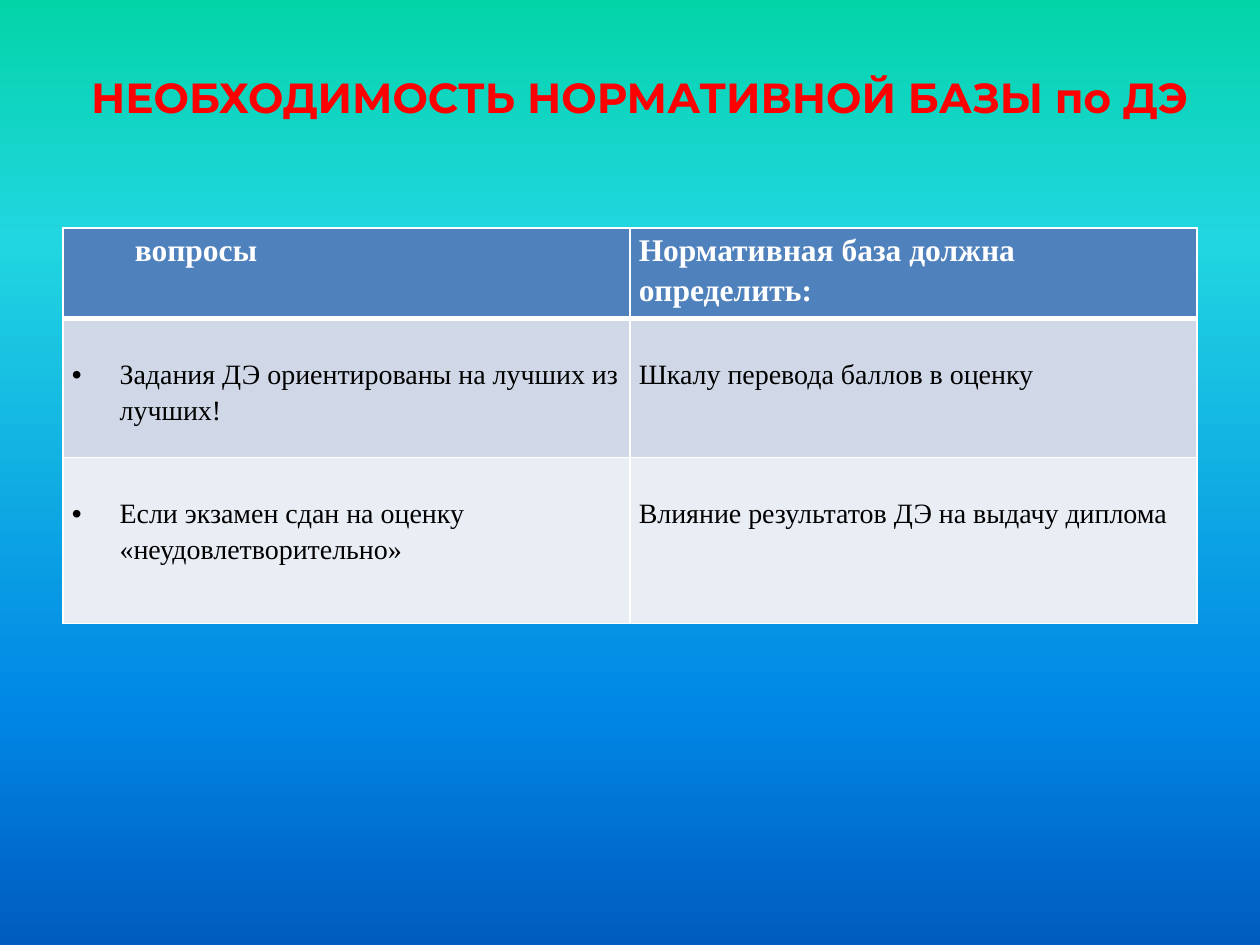
from copy import deepcopy

from lxml.etree import SubElement
from pptx import Presentation
from pptx.dml.color import RGBColor
from pptx.enum.text import MSO_ANCHOR, PP_ALIGN
from pptx.oxml.ns import qn
from pptx.util import Inches, Pt


def rgb(hex_code):
    return RGBColor.from_string(hex_code)


def style_font(font, formats):
    """Apply font settings; the colour goes under the key 'color'."""
    for key, value in formats.items():
        if key == "color":
            font.color.rgb = rgb(value)
        else:
            setattr(font, key, value)


prs = Presentation()
prs.slide_width, prs.slide_height = Inches(10), Inches(7.5)
W, H = prs.slide_width, prs.slide_height
slide = prs.slides.add_slide(prs.slide_layouts[6])

# Background: four-stop gradient from top to bottom
sky = [(0, "03D4A8"), (0.25, "21D6E0"), (0.75, "0087E6"), (1, "005CBF")]
background = slide.background.fill
background.gradient()
background.gradient_angle = 270
stop_list = next(slide.element.iter(qn("a:gsLst")))
while len(stop_list) < len(sky):
    stop_list.append(deepcopy(stop_list[0]))
for stop, (position, color) in zip(background.gradient_stops, sky):
    stop.position = position
    stop.color.rgb = rgb(color)

# Heading
heading = slide.shapes.add_textbox(
    int(W * 0.035), int(H * 0.04), int(W * 0.945), int(H * 0.124)).text_frame
heading.word_wrap = True
heading.vertical_anchor = MSO_ANCHOR.MIDDLE
heading_line = heading.paragraphs[0]
heading_line.alignment = PP_ALIGN.CENTER
heading_run = heading_line.add_run()
heading_run.text = "НЕОБХОДИМОСТЬ НОРМАТИВНОЙ БАЗЫ по ДЭ"
style_font(heading_run.font, {
    "name": "Montserrat", "size": Pt(24), "bold": True, "color": "FF0000"})

# Questions and what the regulations must settle
rows = [
    ("вопросы", "Нормативная база должна определить:"),
    ("Задания ДЭ ориентированы на лучших из лучших!",
     "Шкалу перевода баллов в оценку"),
    ("Если экзамен сдан на оценку «неудовлетворительно»",
     "Влияние результатов ДЭ на выдачу диплома"),
]
row_fills = ["4F81BD", "D0D8E8", "E9EDF4"]
row_heights = [Inches(0.72), Inches(1.1), Inches(1.32)]
header_font = {"name": "Times New Roman", "size": Pt(18), "bold": True,
               "color": "FFFFFF"}
body_font = {"name": "Times New Roman", "size": Pt(16), "bold": False,
             "color": "000000"}

table = slide.shapes.add_table(
    len(rows), 2, int(W * 0.05), Inches(1.81), int(W * 0.9),
    sum(row_heights)).table
for row, height in zip(table.rows, row_heights):
    row.height = height

for r, texts in enumerate(rows):
    is_header = r == 0
    for c, text in enumerate(texts):
        cell = table.cell(r, c)
        cell.margin_left = cell.margin_right = Inches(0.07)
        cell.margin_top = 0 if is_header else Inches(0.29)
        cell.margin_bottom = 0

        # A thick rule separates the header from the body
        borders = {"lnL": 1, "lnR": 1, "lnT": 3 if r == 1 else 1,
                   "lnB": 3 if is_header else 1}
        properties = cell._tc.get_or_add_tcPr()
        for side, width in borders.items():
            line = SubElement(properties, qn(f"a:{side}"), w=str(Pt(width)))
            SubElement(SubElement(line, qn("a:solidFill")),
                       qn("a:srgbClr"), val="FFFFFF")
        cell.fill.solid()
        cell.fill.fore_color.rgb = rgb(row_fills[r])

        paragraph = cell.text_frame.paragraphs[0]
        paragraph.line_spacing = 1.15
        run = paragraph.add_run()
        run.text = text
        style_font(run.font, header_font if is_header else body_font)
        if c == 0:
            layout = paragraph._p.get_or_add_pPr()
            layout.set("marL", str(Inches(0.5 if is_header else 0.38)))
            layout.set("indent", str(0 if is_header else -Inches(0.38)))
            if not is_header:
                SubElement(layout, qn("a:buFont"), typeface="Arial")
                SubElement(layout, qn("a:buChar"), char="•")

prs.save("out.pptx")
